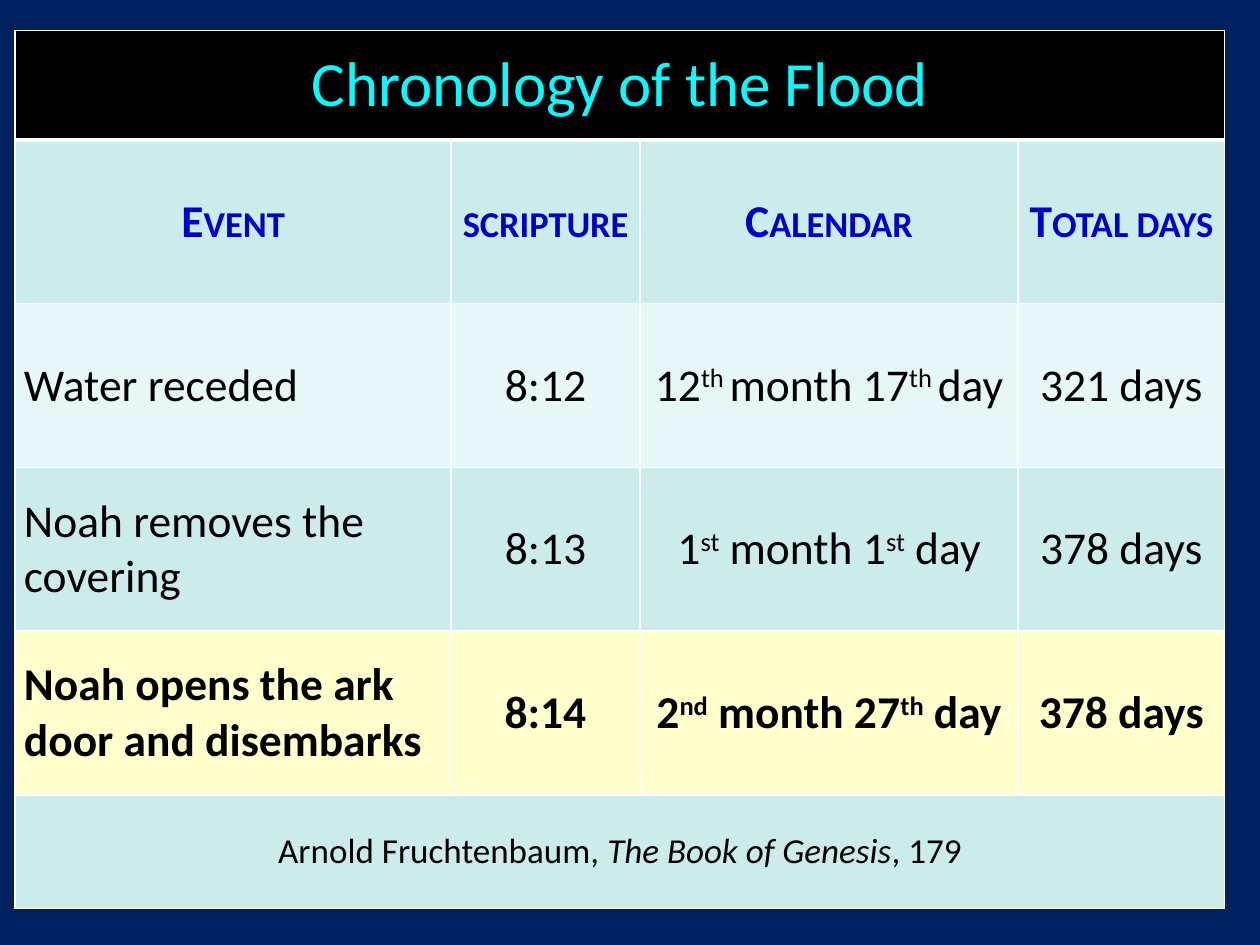
import pptx
import pptx.dml.color
import pptx.enum.text
import pptx.oxml.ns
import pptx.util
from lxml import etree
from pptx.dml.color import RGBColor
from pptx.util import Inches

NAVY = RGBColor(0x00, 0x20, 0x60)
BLACK = RGBColor(0x00, 0x00, 0x00)
WHITE = RGBColor(0xFF, 0xFF, 0xFF)
CYAN = RGBColor(0x00, 0xFF, 0xFF)
BLUE = RGBColor(0x00, 0x00, 0xCC)
TEAL = RGBColor(0xCC, 0xEC, 0xEC)
PALE_TEAL = RGBColor(0xE7, 0xF6, 0xF6)
YELLOW = RGBColor(0xFF, 0xFF, 0xCC)

FONT = "Calibri"
COLUMN_WIDTHS = [3.46, 1.5, 3, 1.64]
ROW_HEIGHTS = [0.87, 1.3, 1.3, 1.3, 1.3, 0.9]

HEADINGS = ["Event", "scripture", "Calendar", "Total days"]
# A caret switches superscript on and off
EVENTS = [
    (["Water receded", "8:12", "12^th ^month 17^th ^day", "321 days"], PALE_TEAL, False),
    (["Noah removes the covering", "8:13", "1^st^ month 1^st^ day", "378 days"], TEAL, False),
    (["Noah opens the ark door and disembarks", "8:14", "2^nd^ month 27^th^ day", "378 days"],
     YELLOW, True),
]


def write_text(cell, text, size=26, color=BLACK, bold=False, centered=True, small_caps=False):
    """Write text in which ^ toggles superscript and * toggles italics."""
    paragraph = cell.text_frame.paragraphs[0]
    alignment = pptx.enum.text.PP_ALIGN
    paragraph.alignment = alignment.CENTER if centered else alignment.LEFT
    for italic_index, section in enumerate(text.split("*")):
        for raised_index, piece in enumerate(section.split("^")):
            run = paragraph.add_run()
            run.text = piece
            font = run.font
            font.name = FONT
            font.size = pptx.util.Pt(size)
            font.color.rgb = color
            font.bold = bold
            font.italic = italic_index % 2 == 1
            properties = run._r.get_or_add_rPr()
            if raised_index % 2:
                properties.set("baseline", "30000")
            if small_caps:
                properties.set("cap", "small")


def add_borders(cell, bottom=1, top=1):
    properties = cell._tc.get_or_add_tcPr()
    for side, width in (("L", 1), ("R", 1), ("T", top), ("B", bottom)):
        line = etree.SubElement(properties, pptx.oxml.ns.qn(f"a:ln{side}"),
                                w=str(pptx.util.Pt(width)))
        fill = etree.SubElement(line, pptx.oxml.ns.qn("a:solidFill"))
        etree.SubElement(fill, pptx.oxml.ns.qn("a:srgbClr"), val=str(WHITE))


def format_cell(cell, fill, **borders):
    cell.margin_left = cell.margin_right = Inches(0.07)
    cell.margin_top = cell.margin_bottom = Inches(0.04)
    cell.vertical_anchor = pptx.enum.text.MSO_ANCHOR.MIDDLE
    add_borders(cell, **borders)
    cell.fill.solid()
    cell.fill.fore_color.rgb = fill


def add_grid(slide):
    frame = slide.shapes.add_table(
        len(ROW_HEIGHTS), len(COLUMN_WIDTHS), Inches(0.12), Inches(0.24),
        Inches(sum(COLUMN_WIDTHS)), Inches(sum(ROW_HEIGHTS)))
    table = frame.table
    table.first_row = table.horz_banding = False
    for column, width in zip(table.columns, COLUMN_WIDTHS):
        column.width = Inches(width)
    for row, height in zip(table.rows, ROW_HEIGHTS):
        row.height = Inches(height)
    return table


def fill_merged_row(table, row, text, fill, borders, **text_format):
    for cell in table.rows[row].cells:
        format_cell(cell, fill, **borders)
    first = table.cell(row, 0)
    first.merge(table.cell(row, len(COLUMN_WIDTHS) - 1))
    write_text(first, text, **text_format)


def main():
    presentation = pptx.Presentation()
    presentation.slide_width = Inches(10)
    presentation.slide_height = Inches(7.5)
    slide = presentation.slides.add_slide(presentation.slide_layouts[6])
    slide.background.fill.solid()
    slide.background.fill.fore_color.rgb = NAVY

    table = add_grid(slide)

    # Title row
    fill_merged_row(table, 0, "Chronology of the Flood", BLACK, {"bottom": 3},
                    size=36, color=CYAN)

    # Column headings
    for cell, heading in zip(table.rows[1].cells, HEADINGS):
        format_cell(cell, TEAL, top=3)
        write_text(cell, heading, color=BLUE, bold=True, small_caps=True)

    # Events
    for row, (texts, fill, bold) in enumerate(EVENTS, start=2):
        for column, text in enumerate(texts):
            cell = table.cell(row, column)
            format_cell(cell, fill)
            write_text(cell, text, bold=bold, centered=column > 0)

    # Citation row
    fill_merged_row(table, len(ROW_HEIGHTS) - 1,
                    "Arnold Fruchtenbaum, *The Book of Genesis*, 179", TEAL, {}, size=20)

    presentation.save("out.pptx")


if __name__ == "__main__":
    main()
